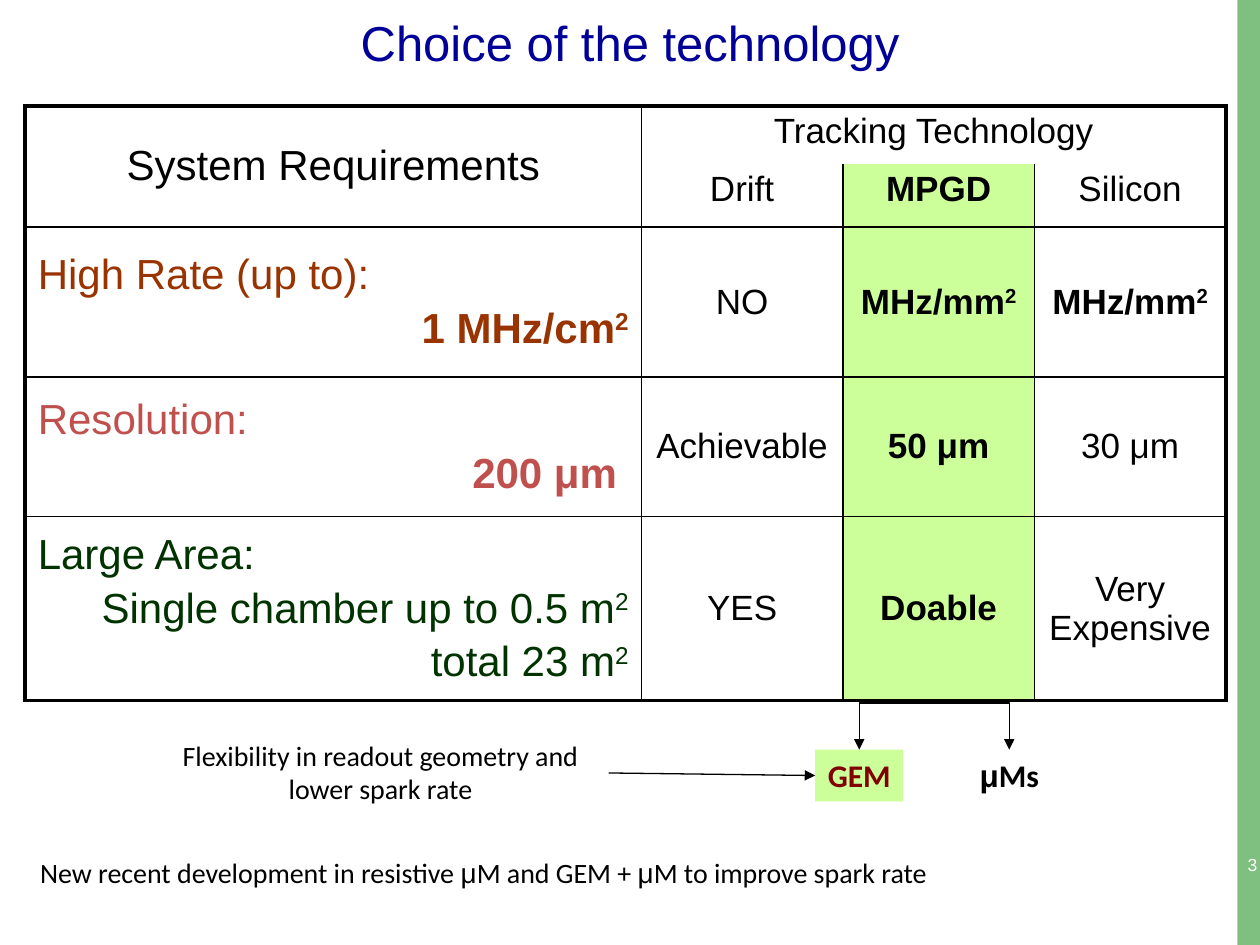
from pptx import Presentation
from pptx.dml.color import RGBColor
from pptx.enum.shapes import MSO_CONNECTOR, MSO_SHAPE
from pptx.enum.text import MSO_ANCHOR, PP_ALIGN
from pptx.oxml import parse_xml
from pptx.oxml.ns import nsdecls, qn
from pptx.oxml.xmlchemy import OxmlElement
from pptx.util import Inches, Pt

BLACK, LIME = "000000", "CCFF99"
THIN, THICK = 1, 2.25
NO_STYLE = "{2D5ABB26-0587-4C30-8999-92F81FD0307C}"
COLUMNS = [4.89, 1.6, 1.52, 1.52]
ROWS = [0.46, 0.48, 1.19, 1.11, 1.46]
REQUIREMENTS = [
    (["High Rate (up to):", "1 MHz/cm^2"], "993300", True,
     ["NO", "MHz/mm^2", "MHz/mm^2"]),
    (["Resolution:", "200 μm "], "C0504D", True,
     ["Achievable", "50 μm", "30 μm"]),
    (["Large Area:", "Single chamber up to 0.5 m^2", "total 23 m^2"], "003300", False,
     ["YES", "Doable", "Very Expensive"]),
]


def rgb(value):
    return RGBColor.from_string(value)


def format_paragraph(paragraph, size, color, bold=False, align=PP_ALIGN.CENTER, font="Arial"):
    paragraph.alignment = align
    paragraph.font.size = Pt(size)
    paragraph.font.color.rgb = rgb(color)
    paragraph.font.bold = bold
    if font:
        paragraph.font.name = font


def add_scripted_text(paragraph, text):
    base, _, exponent = text.partition("^")
    paragraph.add_run().text = base
    if exponent:
        raised = paragraph.add_run()
        raised.text = exponent
        raised._r.get_or_add_rPr().set("baseline", "30000")


def write_cell(cell, lines, size=20, color=BLACK, bold=False, anchor=MSO_ANCHOR.MIDDLE,
               first_align=PP_ALIGN.CENTER):
    cell.vertical_anchor = anchor
    for index, line in enumerate(lines):
        paragraph = cell.text_frame.add_paragraph() if index else cell.text_frame.paragraphs[0]
        add_scripted_text(paragraph, line)
        emphasized = bold and (index > 0 or len(lines) == 1)
        format_paragraph(paragraph, size, color, emphasized,
                         PP_ALIGN.RIGHT if index else first_align)
        paragraph.space_before = Pt(round(size / 6))


def draw_borders(cell, row, column):
    bottom, right = row + cell.span_height, column + cell.span_width
    widths = {
        "L": THIN if column else THICK,
        "R": THICK if right == len(COLUMNS) else THIN,
        "T": THICK if row == 0 else 0 if row == 1 else THIN,
        "B": THICK if bottom == len(ROWS) else 0 if bottom == 1 else THIN,
    }
    for side, width in widths.items():
        paint = f'<a:solidFill><a:srgbClr val="{BLACK}"/></a:solidFill>' if width else "<a:noFill/>"
        cell._tc.get_or_add_tcPr().append(parse_xml(
            f'<a:ln{side} {nsdecls("a")} w="{int(Pt(width))}">{paint}</a:ln{side}>'))


def add_requirements_table(slide, left, top):
    table = slide.shapes.add_table(len(ROWS), len(COLUMNS), Inches(left), Inches(top),
                                   Inches(sum(COLUMNS)), Inches(sum(ROWS))).table
    table.first_row = table.horz_banding = False
    table._tbl.tblPr.find(qn("a:tableStyleId")).text = NO_STYLE
    for column, width in zip(table.columns, COLUMNS):
        column.width = Inches(width)
    for row, height in zip(table.rows, ROWS):
        row.height = Inches(height)
    table.cell(0, 0).merge(table.cell(1, 0))
    table.cell(0, 1).merge(table.cell(0, 3))

    write_cell(table.cell(0, 0), ["System Requirements"], 24)
    write_cell(table.cell(0, 1), ["Tracking Technology"], anchor=MSO_ANCHOR.TOP)
    for column, technology in enumerate(["Drift", "MPGD", "Silicon"], 1):
        write_cell(table.cell(1, column), [technology], bold=column == 2, anchor=MSO_ANCHOR.TOP)
    for row, (lines, color, bold, ratings) in enumerate(REQUIREMENTS, 2):
        write_cell(table.cell(row, 0), lines, 24, color, bold, first_align=PP_ALIGN.LEFT)
        for column, rating in enumerate(ratings, 1):
            write_cell(table.cell(row, column), [rating],
                       bold=column == 2 or rating == "MHz/mm^2")

    for row in range(len(ROWS)):
        for column in range(len(COLUMNS)):
            cell = table.cell(row, column)
            if cell.is_spanned:
                continue
            draw_borders(cell, row, column)
            if column == 2:
                cell.fill.solid()
                cell.fill.fore_color.rgb = rgb(LIME)
            else:
                cell.fill.background()


def add_label(slide, box, pieces, size=16, color=BLACK, bold=False,
              align=PP_ALIGN.CENTER, wrap=False, fill=None):
    lengths = [Inches(value) for value in box]
    if fill:
        label = slide.shapes.add_shape(MSO_SHAPE.RECTANGLE, *lengths)
        label.shadow.inherit = False
        label.fill.solid()
        label.fill.fore_color.rgb = rgb(fill)
        label.line.fill.background()
    else:
        label = slide.shapes.add_textbox(*lengths)
    frame = label.text_frame
    frame.word_wrap = wrap
    frame.vertical_anchor = MSO_ANCHOR.TOP
    paragraph = frame.paragraphs[0]
    fonts = {font for _, font in pieces}
    format_paragraph(paragraph, size, color, bold, align,
                     fonts.pop() if len(fonts) == 1 else None)
    for text, font in pieces:
        run = paragraph.add_run()
        run.text = text
        if fonts:
            run.font.name = font
    return label


def add_arrow(slide, kind, start, end, arrow_end):
    arrow = slide.shapes.add_connector(kind, *[Inches(value) for value in (*start, *end)])
    arrow.line.color.rgb = rgb(BLACK)
    arrow.line.width = Pt(0.75)
    tip = OxmlElement(f"a:{arrow_end}")
    tip.set("type", "triangle")
    arrow.line._get_or_add_ln().append(tip)
    arrow._element.spPr.append(OxmlElement("a:effectLst"))
    if kind == MSO_CONNECTOR.ELBOW:
        arrow._element.spPr.find(qn("a:prstGeom")).set("prst", "bentConnector2")
    return arrow


def add_detector_choice(slide, left, top):
    def box(x, y, width, height):
        return left + x, top + y, width, height

    flexibility = add_label(
        slide, box(0, 0.23, 3.62, 0.65),
        [("Flexibility in readout geometry and lower spark rate", "Calibri")], wrap=True)
    gem = add_label(slide, box(5.26, 0.37, 0.7, 0.41), [("GEM", "Calibri")],
                    18, "800000", True, fill=LIME)
    add_label(slide, box(6.46, 0.37, 0.68, 0.4), [("μ", "Arial"), ("Ms", "Calibri")],
              18, bold=True)
    fork = (left + 6.23, top)
    for x in (5.61, 6.8):
        add_arrow(slide, MSO_CONNECTOR.ELBOW, fork, (left + x, top + 0.37), "tailEnd")
    link = add_arrow(slide, MSO_CONNECTOR.STRAIGHT, (left + 5.26, top + 0.57),
                     (left + 3.63, top + 0.55), "headEnd")
    link.begin_connect(gem, 1)
    link.end_connect(flexibility, 3)


def add_side_band(slide, left, width, height):
    band = slide.shapes.add_shape(MSO_SHAPE.RECTANGLE, Inches(left), 0,
                                  Inches(width), Inches(height))
    band.shadow.inherit = False
    band.line.fill.background()
    band.fill.solid()
    band.fill.fore_color.rgb = rgb("008000")
    alpha = OxmlElement("a:alpha")
    alpha.set("val", "50000")
    band._element.spPr.find(qn("a:solidFill"))[0].append(alpha)
    add_label(slide, (left - 0.08, 6.73, 0.4, 0.27), [("3", "Arial")], 10, "FFFFFF")


def set_title(slide, left, top, width, height):
    title = slide.shapes.title
    title.left, title.top = Inches(left), Inches(top)
    title.width, title.height = Inches(width), Inches(height)
    title.text_frame.text = "Choice of the technology"
    title.text_frame.vertical_anchor = MSO_ANCHOR.MIDDLE
    format_paragraph(title.text_frame.paragraphs[0], 28, "000099")


def main():
    deck = Presentation()
    deck.slide_width, deck.slide_height = Inches(10), Inches(7.5)
    slide = deck.slides.add_slide(deck.slide_layouts[5])
    add_side_band(slide, 9.82, 0.18, 7.5)
    set_title(slide, 0.5, 0.01, 9, 0.64)
    add_requirements_table(slide, 0.2, 0.84)
    add_detector_choice(slide, 1.21, 5.58)
    add_label(slide, (0.22, 6.74, 7.31, 0.36),
              [("New recent development in resistive ", "Calibri"), ("μ", "Arial"),
               ("M and GEM + ", "Calibri"), ("μ", "Arial"),
               ("M to improve spark rate", "Calibri")], align=PP_ALIGN.LEFT)
    deck.save("out.pptx")


if __name__ == "__main__":
    main()
